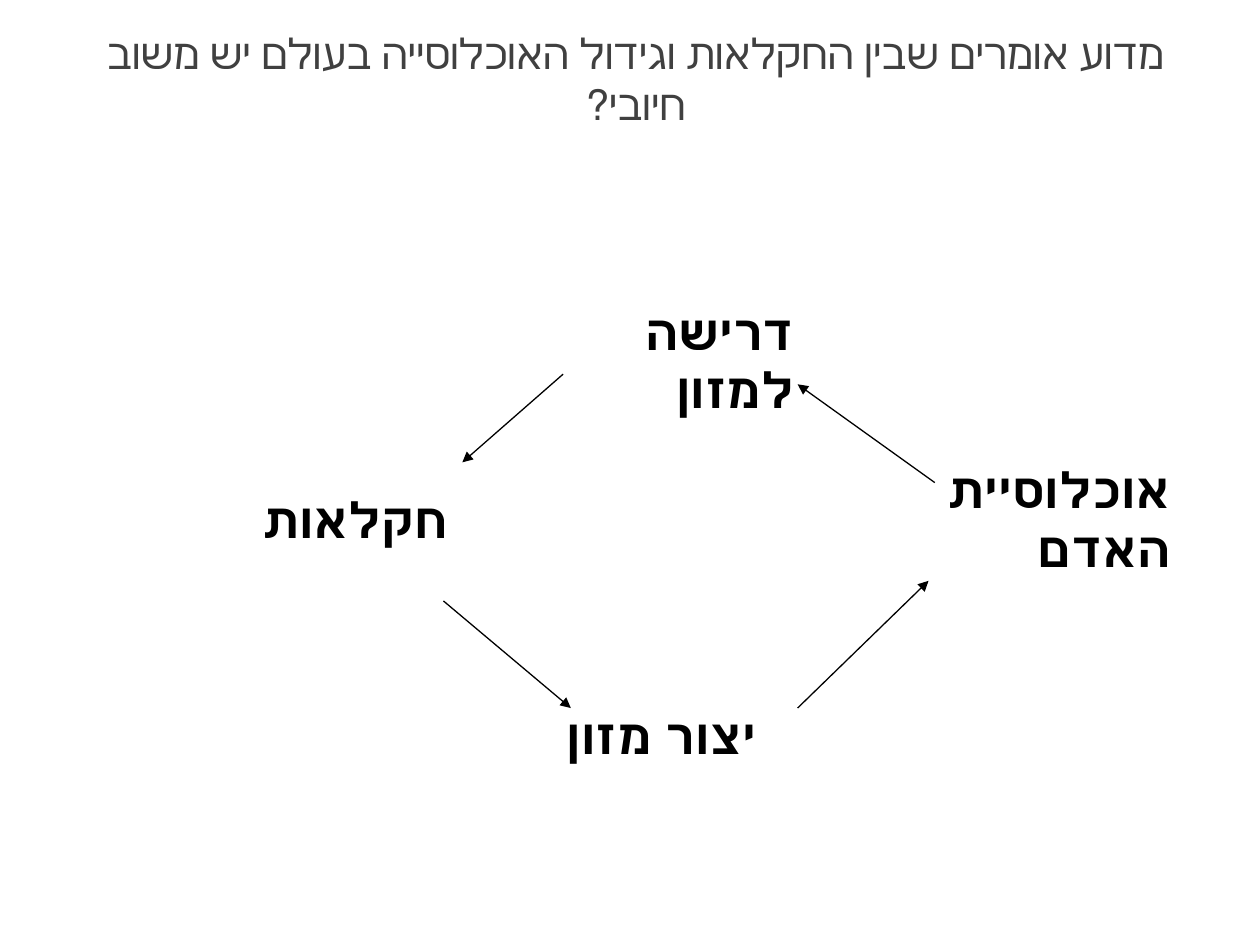
from pptx import Presentation
from pptx.dml.color import RGBColor
from pptx.enum.shapes import MSO_CONNECTOR
from pptx.enum.text import MSO_ANCHOR, PP_ALIGN
from pptx.oxml.ns import qn
from pptx.util import Pt
from lxml import etree

CENTER, RIGHT = PP_ALIGN.CENTER, PP_ALIGN.RIGHT
TOP, MIDDLE = MSO_ANCHOR.TOP, MSO_ANCHOR.MIDDLE
STRAIGHT = MSO_CONNECTOR.STRAIGHT

# Content: lengths in points
QUESTION = "מדוע אומרים שבין החקלאות וגידול האוכלוסייה בעולם יש משוב חיובי?"
QUESTION_BOX = (25.2, 20.2, 676, 49)

# Stages of the loop: text, left, top, width, anchor
STAGE_HEIGHT = 41
STAGES = [
    ("אוכלוסיית האדם", 456.5, 275.8, 219.6, MIDDLE),
    ("דרישה למזון", 292.3, 168.5, 168.5, TOP),
    ("חקלאות", 127.4, 275.8, 135.4, MIDDLE),
    ("יצור מזון", 309.6, 399.6, 129.6, MIDDLE),
]

# Arrows from each stage to the next: start x, start y, end x, end y
ARROWS = [
    (534.2, 275.8, 455.8, 219.6),
    (321.8, 213.8, 264.2, 264.2),
    (253.4, 343.4, 326.2, 404.6),
    (455.8, 404.6, 530.6, 331.9),
]


def color(hex_value):
    return RGBColor.from_string(hex_value)


def add_text(slide, text, box, anchor, align, font_name, size, hex_value,
             bold=False, margin_left=7.2):
    frame = slide.shapes.add_textbox(*map(Pt, box)).text_frame
    frame.word_wrap = True
    frame.vertical_anchor = anchor
    frame.margin_left = Pt(margin_left)
    paragraph = frame.paragraphs[0]
    paragraph.text = text
    paragraph.alignment = align
    paragraph._p.get_or_add_pPr().set("rtl", "1")
    font = paragraph.font
    font.name, font.size, font.bold = font_name, Pt(size), bold
    font.color.rgb = color(hex_value)


def add_arrow(slide, ends):
    arrow = slide.shapes.add_connector(STRAIGHT, *map(Pt, ends))
    arrow.line.color.rgb = color("000000")
    arrow.line.width = Pt(0.75)
    etree.SubElement(arrow.line._get_or_add_ln(), qn("a:tailEnd"), type="triangle")
    etree.SubElement(arrow._element.spPr, qn("a:effectLst"))


def main():
    presentation = Presentation()
    presentation.slide_width, presentation.slide_height = Pt(720), Pt(540)
    slide = presentation.slides.add_slide(presentation.slide_layouts[6])

    # Question
    add_text(slide, QUESTION, QUESTION_BOX, MIDDLE, CENTER, "Arial", 24, "404040")

    # Feedback loop
    for text, left, top, width, anchor in STAGES:
        add_text(slide, text, (left, top, width, STAGE_HEIGHT), anchor, RIGHT,
                 "Times New Roman", 28, "000000", bold=True, margin_left=10)
    for ends in ARROWS:
        add_arrow(slide, ends)

    presentation.save("out.pptx")


if __name__ == "__main__":
    main()
